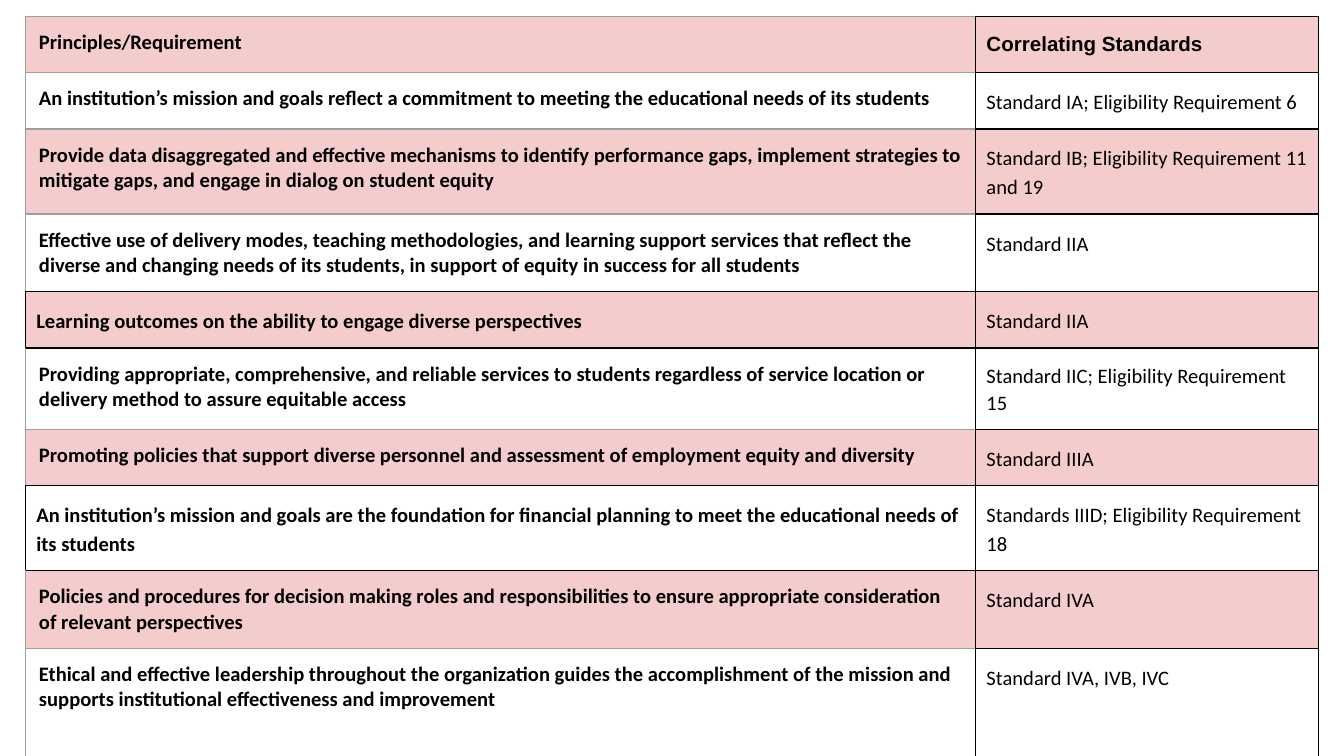
from lxml.etree import SubElement
from pptx import Presentation
from pptx.dml.color import RGBColor
from pptx.oxml.ns import qn
from pptx.util import Inches, Pt

COLORS = {"text": "000000", "line": "000000", "soft_line": "9E9E9E", "band": "F4CCCC"}

PRINCIPLES = [
    ("Principles/Requirement", "Correlating Standards"),
    ("An institution’s mission and goals reflect a commitment to meeting the educational needs of its students",
     "Standard IA; Eligibility Requirement 6"),
    ("Provide data disaggregated and effective mechanisms to identify performance gaps, implement strategies to "
     "mitigate gaps, and engage in dialog on student equity",
     "Standard IB; Eligibility Requirement 11 and 19"),
    ("Effective use of delivery modes, teaching methodologies, and learning support services that reflect the "
     "diverse and changing needs of its students, in support of equity in success for all students",
     "Standard IIA"),
    ("Learning outcomes on the ability to engage diverse perspectives", "Standard IIA"),
    ("Providing appropriate, comprehensive, and reliable services to students regardless of service location or "
     "delivery method to assure equitable access",
     "Standard IIC; Eligibility Requirement 15"),
    ("Promoting policies that support diverse personnel and assessment of employment equity and diversity",
     "Standard IIIA"),
    ("An institution’s mission and goals are the foundation for financial planning to meet the educational needs of "
     "its students",
     "Standards IIID; Eligibility Requirement 18"),
    ("Policies and procedures for decision making roles and responsibilities to ensure appropriate consideration "
     "of relevant perspectives",
     "Standard IVA"),
    ("Ethical and effective leadership throughout the organization guides the accomplishment of the mission and "
     "supports institutional effectiveness and improvement",
     "Standard IVA, IVB, IVC"),
]
DARK_ROWS = {4, 7}
ROW_HEIGHT = 0.42
LAST_ROW_HEIGHT = 0.85


def write_text(cell, text, font="Calibri", bold=False, spacing=1.0, inset=0.08):
    cell.margin_left = cell.margin_right = Inches(inset)
    cell.margin_top = cell.margin_bottom = Inches(0.1)
    para = cell.text_frame.paragraphs[0]
    para.line_spacing = spacing
    span = para.add_run()
    span.text = text
    span.font.name = font
    span.font.size = Pt(11)
    span.font.bold = bold
    span.font.color.rgb = RGBColor.from_string(COLORS["text"])


def draw_borders(cell, **sides):
    properties = cell._tc.get_or_add_tcPr()
    for side in "LRTB":
        line = SubElement(properties, qn(f"a:ln{side}"), w=str(Pt(0.75)))
        fill = SubElement(line, qn("a:solidFill"))
        SubElement(fill, qn("a:srgbClr"), val=COLORS[sides.get(side, "line")])


deck = Presentation()
deck.slide_width = Inches(10)
deck.slide_height = Inches(10) * 9 // 16
page = deck.slides.add_slide(deck.slide_layouts[6])

frame = page.shapes.add_table(
    len(PRINCIPLES), 2, Inches(0.19), Inches(0.12), Inches(9.62), Inches(ROW_HEIGHT * len(PRINCIPLES))
)
table = frame.table
table.first_row = False
table.horz_banding = False
table.columns[0].width = Inches(7.07)
table.columns[1].width = Inches(2.55)

for index, (principle, standard) in enumerate(PRINCIPLES):
    table.rows[index].height = Inches(ROW_HEIGHT)
    left, right = table.cell(index, 0), table.cell(index, 1)

    if index in DARK_ROWS:
        write_text(left, principle, bold=True, spacing=1.15)
        draw_borders(left)
    else:
        write_text(left, principle, bold=True, inset=0.1)
        draw_borders(
            left,
            L="soft_line",
            T="line" if index - 1 in DARK_ROWS else "soft_line",
            B="line" if index + 1 in DARK_ROWS else "soft_line",
        )

    if index == 0:
        write_text(right, standard, font="Arial", bold=True, spacing=1.15)
    else:
        write_text(right, standard, spacing=1.07 if index == 5 else 1.15)
    draw_borders(right)

    for cell in (left, right):
        if index % 2 == 0:
            cell.fill.solid()
            cell.fill.fore_color.rgb = RGBColor.from_string(COLORS["band"])
        else:
            cell.fill.background()

table.rows[len(PRINCIPLES) - 1].height = Inches(LAST_ROW_HEIGHT)

deck.save("out.pptx")
